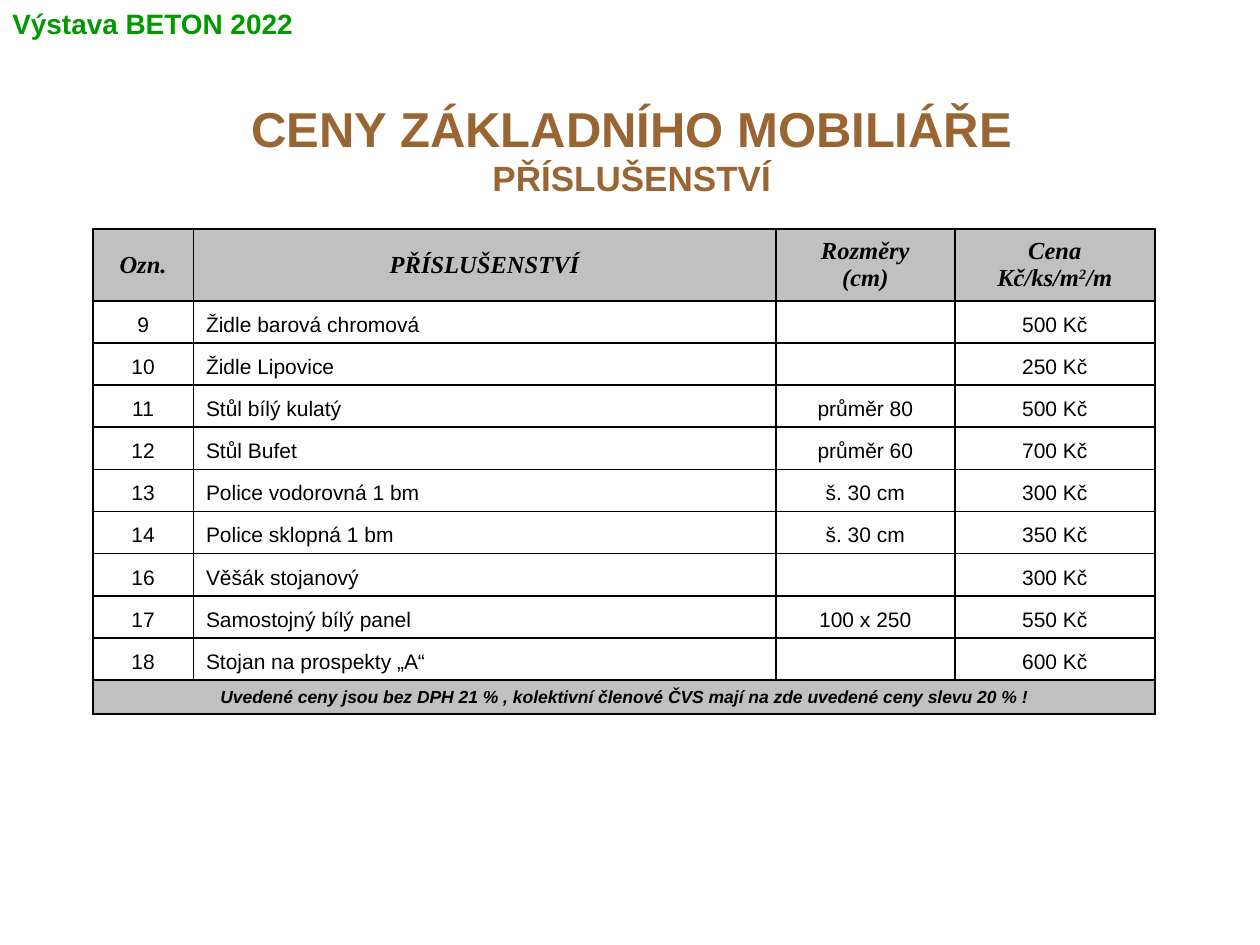
from lxml.etree import SubElement
from pptx import Presentation
from pptx.dml.color import RGBColor
from pptx.enum.text import MSO_ANCHOR, MSO_AUTO_SIZE, PP_ALIGN
from pptx.oxml.ns import qn
from pptx.util import Cm, Pt

BLACK, GREY, BROWN, GREEN = "000000", "C0C0C0", "996633", "009900"
COLUMN_WIDTHS = (2.03, 11.74, 3.61, 4.03)
HEADER_HEIGHT, ITEM_HEIGHT, NOTE_HEIGHT = 1.44, 0.85, 0.68
HEADER = ("Ozn.", "PŘÍSLUŠENSTVÍ", "Rozměry\n(cm)", "Cena\nKč/ks/m")
ITEMS = (
    ("9", "Židle barová chromová", "", "500 Kč"),
    ("10", "Židle Lipovice", "", "250 Kč"),
    ("11", "Stůl bílý kulatý", "průměr 80", "500 Kč"),
    ("12", "Stůl Bufet", "průměr 60", "700 Kč"),
    ("13", "Police vodorovná 1 bm", "š. 30 cm", "300 Kč"),
    ("14", "Police sklopná 1 bm", "š. 30 cm", "350 Kč"),
    ("16", "Věšák stojanový", "", "300 Kč"),
    ("17", "Samostojný bílý panel", "100 x 250", "550 Kč"),
    ("18", "Stojan na prospekty „A“", "", "600 Kč"),
)
NOTE = ("Uvedené ceny jsou bez DPH 21 % , kolektivní členové ČVS "
        "mají na zde uvedené ceny slevu 20 % !")


def color(value):
    return RGBColor.from_string(value)


def format_span(span, size, fill, font="Arial", bold=False, italic=False):
    span.font.name, span.font.size = font, Pt(size)
    span.font.bold, span.font.italic = bold, italic
    span.font.color.rgb = color(fill)


def place(box, left, top, width, height):
    box.left, box.top, box.width, box.height = map(Cm, (left, top, width, height))


def add_title(page):
    title = page.shapes.title
    place(title, 1.04, 1.85, 23.39, 2.31)
    frame = title.text_frame
    frame.auto_size = MSO_AUTO_SIZE.SHAPE_TO_FIT_TEXT
    frame.vertical_anchor = MSO_ANCHOR.TOP
    frame.text = "CENY ZÁKLADNÍHO MOBILIÁŘE\vPŘÍSLUŠENSTVÍ"
    paragraph = frame.paragraphs[0]
    paragraph.alignment = PP_ALIGN.CENTER
    for span, size in zip(paragraph.runs, (28, 20)):
        format_span(span, size, BROWN, bold=True)
    line_break = paragraph._p.find(qn("a:br"))
    SubElement(line_break, qn("a:rPr"), sz="2800")


def add_event_label(page):
    box = page.shapes.add_textbox(0, 0, Cm(6.71), Cm(0.94))
    frame = box.text_frame
    frame.word_wrap = True
    frame.text = "Výstava BETON 2022"
    format_span(frame.paragraphs[0].runs[0], 16, GREEN, bold=True)


def set_borders(cell, **widths):
    """Draw black borders; keys are the sides L, R, T, B in that order, in points."""
    properties = cell._tc.get_or_add_tcPr()
    for side, width in widths.items():
        line = SubElement(properties, qn(f"a:ln{side}"), w=str(Pt(width)))
        fill = SubElement(line, qn("a:solidFill"))
        SubElement(fill, qn("a:srgbClr"), val=BLACK)


def format_text(cell, size, align=PP_ALIGN.CENTER, **style):
    for paragraph in cell.text_frame.paragraphs:
        paragraph.alignment = align
        for span in paragraph.runs:
            format_span(span, size, BLACK, **style)
        # An empty cell takes its line height from here
        SubElement(paragraph._p, qn("a:endParaRPr"), sz=str(size * 100))


def frame_cells(table):
    last_row, last_column = len(table.rows) - 1, len(table.columns) - 1
    for row in range(last_row + 1):
        for column in range(last_column + 1):
            cell = table.cell(row, column)
            set_borders(cell,
                        L=1.5 if column == 0 else 1,
                        R=1.5 if column == last_column else 1,
                        T=1.5 if row <= 1 else 1,
                        B=1.5 if row in (0, last_row) else 1)
            if row in (0, last_row):
                cell.fill.solid()
                cell.fill.fore_color.rgb = color(GREY)
            else:
                cell.fill.background()


def fill_header(table):
    for column, text in enumerate(HEADER):
        cell = table.cell(0, column)
        cell.text_frame.text = text
        cell.vertical_anchor = MSO_ANCHOR.MIDDLE
    unit = cell.text_frame.paragraphs[-1]
    for text in ("2", "/m"):
        unit.add_run().text = text
    unit.runs[1].font._element.set("baseline", "30000")
    for cell in table.rows[0].cells:
        format_text(cell, 14, font="Times New Roman", bold=True, italic=True)


def fill_items(table):
    for row, item in enumerate(ITEMS, 1):
        for column, text in enumerate(item):
            cell = table.cell(row, column)
            cell.text_frame.text = text
            cell.vertical_anchor = MSO_ANCHOR.BOTTOM
            format_text(cell, 12, PP_ALIGN.LEFT if column == 1 else PP_ALIGN.CENTER)


def fill_note(table):
    row = len(table.rows) - 1
    cell = table.cell(row, 0)
    cell.merge(table.cell(row, len(table.columns) - 1))
    cell.text_frame.text = NOTE
    cell.vertical_anchor = MSO_ANCHOR.BOTTOM
    format_text(cell, 10, bold=True, italic=True)


def add_price_table(page):
    heights = (HEADER_HEIGHT, *[ITEM_HEIGHT] * len(ITEMS), NOTE_HEIGHT)
    table = page.shapes.add_table(
        len(heights), len(COLUMN_WIDTHS), Cm(1.87), Cm(4.62),
        Cm(sum(COLUMN_WIDTHS)), Cm(sum(heights))).table
    table.first_row = table.horz_banding = False
    for column, width in zip(table.columns, COLUMN_WIDTHS):
        column.width = Cm(width)
    for row, height in zip(table.rows, heights):
        row.height = Cm(height)
    frame_cells(table)
    fill_header(table)
    fill_items(table)
    fill_note(table)


def main():
    deck = Presentation()
    deck.slide_width, deck.slide_height = Cm(25.4), Cm(19.05)
    page = deck.slides.add_slide(deck.slide_layouts[5])
    add_price_table(page)
    add_title(page)
    add_event_label(page)
    deck.save("out.pptx")


if __name__ == "__main__":
    main()
